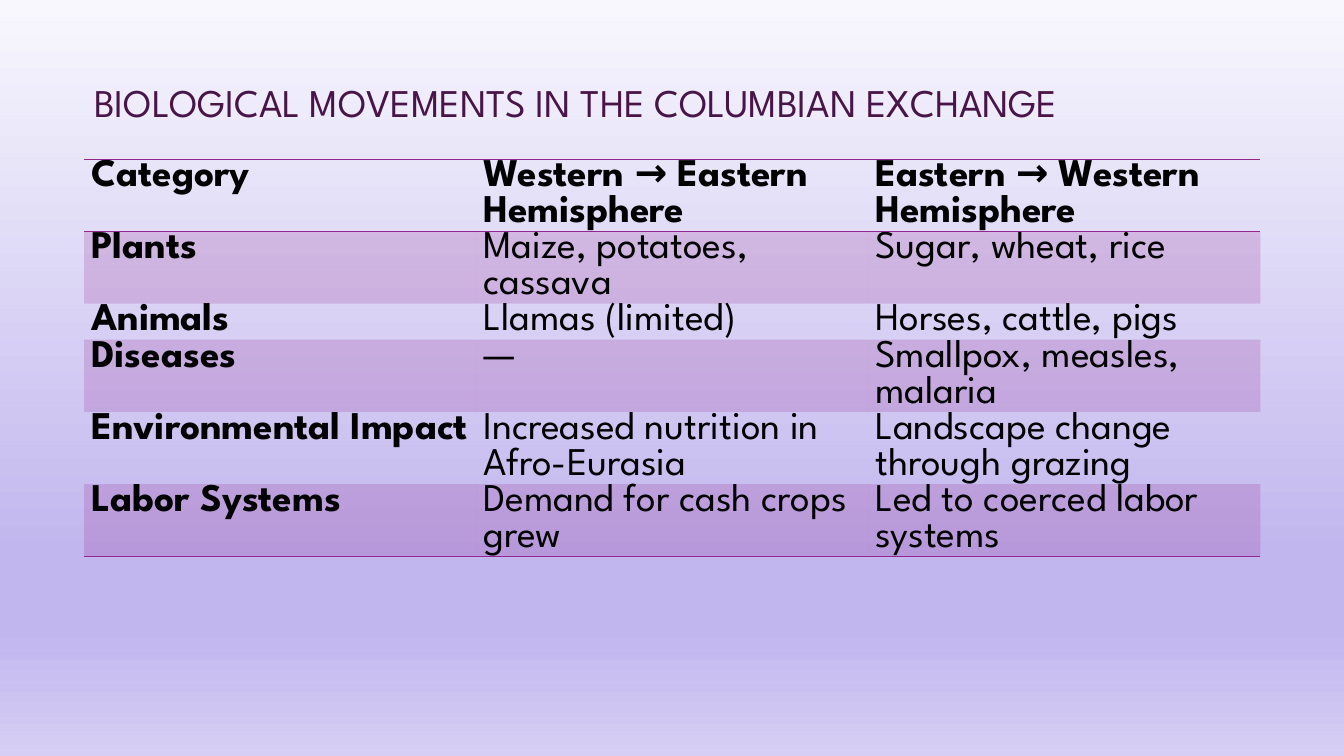
"""Build a slide with a table of biological movements in the Columbian Exchange."""
import dataclasses

import lxml.etree
import pptx
import pptx.dml.color
import pptx.enum.text
import pptx.oxml.ns
import pptx.util

Cm = pptx.util.Cm
Pt = pptx.util.Pt
qn = pptx.oxml.ns.qn


@dataclasses.dataclass(frozen=True)
class Theme:
    font: str = "League Spartan"
    size: int = 28
    title: str = "491447"
    text: str = "000000"
    accent: str = "92278F"
    band_alpha: int = 20
    backdrop: tuple = ((0, "F8F7FD"), (74, "C1B6EE"), (83, "C1B6EE"), (100, "D6CEF4"))


theme = Theme()


def style_text(paragraph, color, bold):
    for span in paragraph.runs:
        span.font.name = theme.font
        span.font.size = Pt(theme.size)
        span.font.bold = bold
        span.font.color.rgb = pptx.dml.color.RGBColor.from_string(color)


def add_border(cell, tag, position):
    line = lxml.etree.Element(qn(tag), w=str(Pt(1)))
    fill = lxml.etree.SubElement(line, qn("a:solidFill"))
    lxml.etree.SubElement(fill, qn("a:srgbClr"), val=theme.accent)
    cell._tc.get_or_add_tcPr().insert(position, line)


deck = pptx.Presentation()
deck.slide_width = Cm(33.87)
deck.slide_height = Cm(19.05)
page = deck.slides.add_slide(deck.slide_layouts[5])

backdrop = page.background.fill
backdrop.gradient()
backdrop.gradient_angle = 270
stops = next(page.element.iter(qn("a:gsLst")))
for stop in list(stops):
    stops.remove(stop)
for percent, color in theme.backdrop:
    stop = lxml.etree.SubElement(stops, qn("a:gs"), pos=str(percent * 1000))
    lxml.etree.SubElement(stop, qn("a:srgbClr"), val=color)

left, width = Cm(2.12), Cm(29.64)
title = page.shapes.title
title.left, title.top, title.width, title.height = left, Cm(1.06), width, Cm(2.24)
frame = title.text_frame
frame.text = "BIOLOGICAL MOVEMENTS IN THE COLUMBIAN EXCHANGE"
frame.word_wrap = True
frame.auto_size = pptx.enum.text.MSO_AUTO_SIZE.NONE
frame.vertical_anchor = pptx.enum.text.MSO_ANCHOR.BOTTOM
heading = frame.paragraphs[0]
heading.alignment = pptx.enum.text.PP_ALIGN.LEFT
heading.line_spacing = 0.9
style_text(heading, theme.title, False)

entries = [
    ("Category", "Western → Eastern Hemisphere", "Eastern → Western Hemisphere"),
    ("Plants", "Maize, potatoes, cassava", "Sugar, wheat, rice"),
    ("Animals", "Llamas (limited)", "Horses, cattle, pigs"),
    ("Diseases", "—", "Smallpox, measles, malaria"),
    ("Environmental Impact", "Increased nutrition in Afro-Eurasia", "Landscape change through grazing"),
    ("Labor Systems", "Demand for cash crops grew", "Led to coerced labor systems"),
]
row_lines = [2, 2, 1, 2, 2, 2]
line_height = Cm(0.91)
last_row = len(entries) - 1

table = page.shapes.add_table(
    len(entries), 3, left, Cm(4.01), width, line_height * sum(row_lines)
).table
table.horz_banding = False
next(table._tbl.iter(qn("a:tableStyleId"))).text = "{2D5ABB26-0587-4C30-8999-92F81FD0307C}"

for row_index, (entry, lines) in enumerate(zip(entries, row_lines)):
    table.rows[row_index].height = line_height * lines
    for column_index, wording in enumerate(entry):
        cell = table.cell(row_index, column_index)
        cell.text_frame.text = wording
        cell.margin_left = cell.margin_right = Cm(0.18)
        cell.margin_top = cell.margin_bottom = 0
        style_text(cell.text_frame.paragraphs[0], theme.text, row_index == 0 or column_index == 0)
        if row_index % 2:
            cell.fill.solid()
            cell.fill.fore_color.rgb = pptx.dml.color.RGBColor.from_string(theme.accent)
            tint = next(cell._tc.tcPr.iter(qn("a:srgbClr")))
            lxml.etree.SubElement(tint, qn("a:alpha"), val=str(theme.band_alpha * 1000))
        else:
            cell.fill.background()
        if row_index in (0, last_row):
            add_border(cell, "a:lnB", 0)
        if row_index == 0:
            add_border(cell, "a:lnT", 0)

deck.save("out.pptx")
